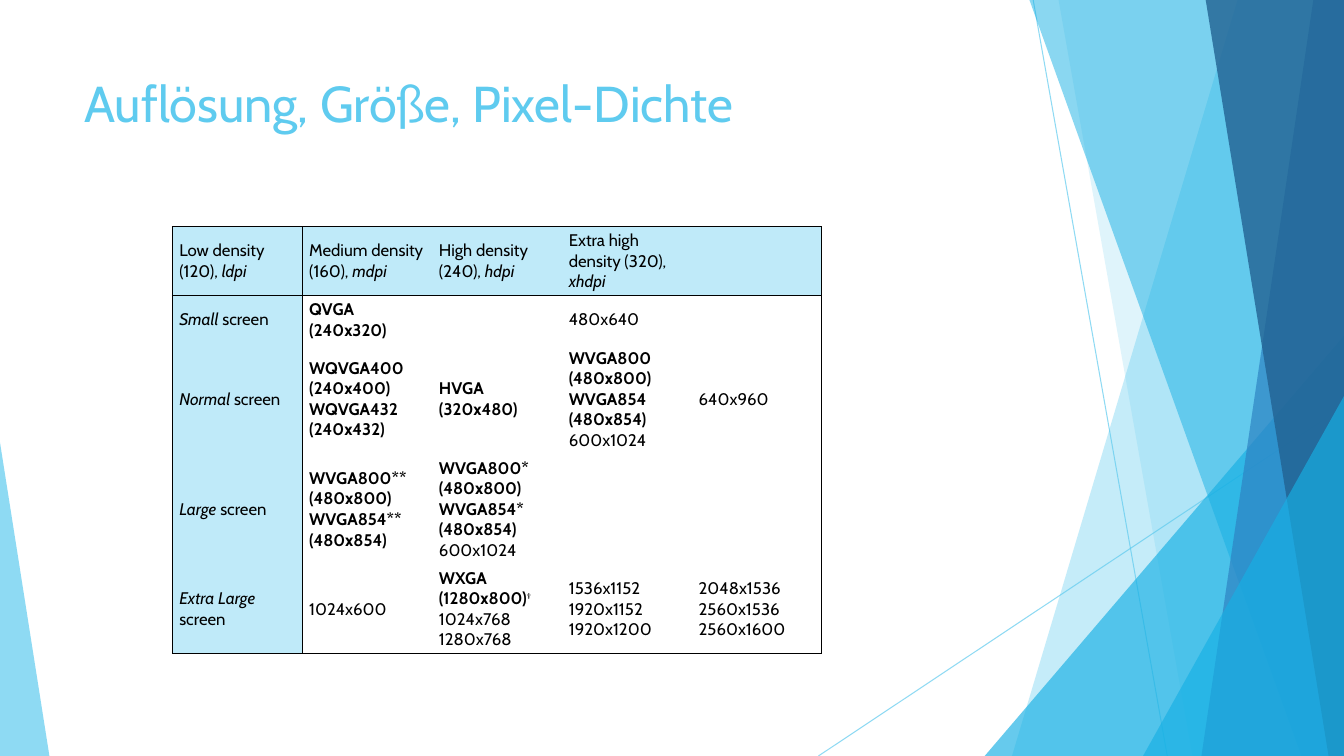
"""Builds a slide with a table of screen sizes and densities beside angular facets."""
from dataclasses import dataclass

from lxml import etree
from pptx import Presentation
from pptx.dml.color import RGBColor
from pptx.enum.shapes import MSO_CONNECTOR, MSO_SHAPE
from pptx.enum.text import MSO_ANCHOR
from pptx.oxml.ns import qn
from pptx.shapes.base import BaseShape
from pptx.slide import Slide
from pptx.table import _Cell
from pptx.text.text import Font, _Paragraph
from pptx.util import Pt

STRAIGHT = MSO_CONNECTOR.STRAIGHT
TRIANGLE = MSO_SHAPE.ISOSCELES_TRIANGLE
TOP, MIDDLE = MSO_ANCHOR.TOP, MSO_ANCHOR.MIDDLE


@dataclass(frozen=True)
class Theme:
    sky: str = "5FCBEF"
    cyan: str = "17B0E4"
    blue: str = "2E83C3"
    navy: str = "226292"
    header: str = "BFEAF9"
    ink: str = "000000"
    font: str = "Cabin"
    title_size: float = 36
    table_size: float = 12


@dataclass(frozen=True)
class Ray:
    x1: float
    y1: float
    x2: float
    y2: float


@dataclass(frozen=True)
class Facet:
    top_x: float
    bottom_x: float
    color: str
    alpha: int


@dataclass(frozen=True)
class Wedge:
    left: float
    top: float
    width: float
    apex: float
    color: str
    alpha: int


@dataclass(frozen=True)
class Run:
    text: str
    bold: bool = False
    italic: bool = False
    raised: bool = False


THEME = Theme()
WIDTH, HEIGHT = 960, 540
FACET_TOP = -0.67

RAYS = [Ray(738, 0, 833.8, HEIGHT), Ray(WIDTH, 290.2, 584.6, HEIGHT)]
DECOR = [
    Facet(884.2, 722.9, THEME.sky, 36),
    Facet(756, 851.8, THEME.sky, 20),
    Wedge(703.4, 239.8, 256.6, 1, THEME.cyan, 66),
    Facet(735.1, 929.5, THEME.cyan, 50),
    Facet(938.2, 858.2, THEME.blue, 70),
    Facet(861.1, 949, THEME.navy, 80),
    Wedge(816.5, 283, 143.5, 1, THEME.cyan, 66),
    Wedge(0, 316.1, 35.3, 0, THEME.sky, 70),
]

TABLE_LEFT, TABLE_TOP = 123.2, 162
COLUMN_WIDTH = 92.75
ROW_HEIGHTS = [49.1, 34.6, 78.7, 78.7, 64]


def density(label: str, code: str) -> list[Run]:
    """Return the runs of a density heading."""
    return [Run(f"{label}, "), Run(code, italic=True)]


def screen(size: str) -> list[Run]:
    """Return the runs of a screen size heading."""
    return [Run(f"{size} ", italic=True), Run("screen")]


def bold(text: str) -> Run:
    """Return a bold run."""
    return Run(text, bold=True)


CELLS: list[list[list[Run]]] = [
    [density("Low density (120)", "ldpi"), density("Medium density (160)", "mdpi"),
     density("High density (240)", "hdpi"), density("Extra high density (320)", "xhdpi"), []],
    [screen("Small"), [bold("QVGA (240x320)")], [], [Run("480x640")], []],
    [screen("Normal"), [bold("WQVGA400 (240x400)\nWQVGA432 (240x432)")],
     [bold("HVGA (320x480)")],
     [bold("WVGA800 (480x800)\nWVGA854 (480x854)\n"), Run("600x1024")], [Run("640x960")]],
    [screen("Large"), [bold("WVGA800** (480x800)\nWVGA854** (480x854)")],
     [bold("WVGA800* (480x800)\nWVGA854* (480x854)\n"), Run("600x1024")], [], []],
    [screen("Extra Large"), [Run("1024x600")],
     [bold("WXGA (1280x800)"), Run("†", raised=True), Run("\n1024x768\n1280x768")],
     [Run("1536x1152\n1920x1152\n1920x1200")], [Run("2048x1536\n2560x1536\n2560x1600")]],
]


def set_alpha(sp: BaseShape, percent: int) -> None:
    """Make the first colour of a shape translucent."""
    color = sp.element.find(".//" + qn("a:srgbClr"))
    etree.SubElement(color, qn("a:alpha"), val=str(percent * 1000))


def style_font(font: Font, size: float, color: str) -> None:
    """Apply the theme typeface with a size and colour."""
    font.name = THEME.font
    font.size = Pt(size)
    font.color.rgb = RGBColor.from_string(color)


def draw_ray(s: Slide, ray: Ray) -> None:
    """Draw a thin translucent line."""
    line = s.shapes.add_connector(STRAIGHT, Pt(ray.x1), Pt(ray.y1), Pt(ray.x2), Pt(ray.y2))
    line.line.color.rgb = RGBColor.from_string(THEME.sky)
    line.line.width = Pt(0.75)
    set_alpha(line, 70)
    etree.SubElement(line.element.spPr, qn("a:effectLst"))


def draw_decor(s: Slide, item: Facet | Wedge) -> None:
    """Draw a translucent facet or wedge reaching the bottom edge."""
    if isinstance(item, Facet):
        builder = s.shapes.build_freeform(Pt(item.top_x), Pt(FACET_TOP))
        corners = [(WIDTH, FACET_TOP), (WIDTH, HEIGHT), (item.bottom_x, HEIGHT)]
        builder.add_line_segments([(Pt(x), Pt(y)) for x, y in corners], close=True)
        sp = builder.convert_to_shape()
    else:
        sp = s.shapes.add_shape(TRIANGLE, Pt(item.left), Pt(item.top),
                                Pt(item.width), Pt(HEIGHT - item.top))
        sp.adjustments[0] = item.apex
    sp.shadow.inherit = False
    sp.fill.solid()
    sp.fill.fore_color.rgb = RGBColor.from_string(item.color)
    sp.line.fill.background()
    set_alpha(sp, item.alpha)


def draw_title(s: Slide, text: str) -> None:
    """Draw the slide title."""
    tf = s.shapes.add_textbox(Pt(53.3), Pt(48), Pt(676.8), Pt(71.3)).text_frame
    tf.word_wrap = True
    tf.vertical_anchor = TOP
    tf.text = text
    style_font(tf.paragraphs[0].runs[0].font, THEME.title_size, THEME.sky)


def add_runs(p: _Paragraph, runs: list[Run]) -> None:
    """Write styled runs, turning newlines into line breaks."""
    for run in runs:
        for i, text in enumerate(run.text.split("\n")):
            if i:
                p.add_line_break()
            if text:
                r = p.add_run()
                r.text = text
                style_font(r.font, THEME.table_size, THEME.ink)
                r.font.bold, r.font.italic = run.bold, run.italic
                if run.raised:
                    r.font._element.set("baseline", "30000")


def set_borders(cell: _Cell, sides: dict[str, bool]) -> None:
    """Rule the chosen sides of a cell and clear the others."""
    tc_pr = cell._tc.get_or_add_tcPr()
    for side, ruled in sides.items():
        ln = etree.SubElement(tc_pr, qn(f"a:ln{side}"), w=str(Pt(1)))
        fill = etree.SubElement(ln, qn("a:solidFill" if ruled else "a:noFill"))
        if ruled:
            etree.SubElement(fill, qn("a:srgbClr"), val=THEME.ink)


def draw_table(s: Slide) -> None:
    """Draw the density table with a ruled frame, header row and header column."""
    rows, cols = len(CELLS), len(CELLS[0])
    table = s.shapes.add_table(rows, cols, Pt(TABLE_LEFT), Pt(TABLE_TOP),
                               Pt(COLUMN_WIDTH * cols), Pt(sum(ROW_HEIGHTS))).table
    table.first_row = table.horz_banding = False
    for column in table.columns:
        column.width = Pt(COLUMN_WIDTH)
    for i, height in enumerate(ROW_HEIGHTS):
        table.rows[i].height = Pt(height)
        for j, runs in enumerate(CELLS[i]):
            cell = table.cell(i, j)
            cell.vertical_anchor = MIDDLE
            cell.margin_left = cell.margin_right = Pt(4.9)
            cell.margin_top = cell.margin_bottom = Pt(2.4)
            set_borders(cell, {"L": j in (0, 1), "R": j in (0, cols - 1),
                               "T": i in (0, 1), "B": i in (0, rows - 1)})
            if i == 0 or j == 0:
                cell.fill.solid()
                cell.fill.fore_color.rgb = RGBColor.from_string(THEME.header)
            else:
                cell.fill.background()
            add_runs(cell.text_frame.paragraphs[0], runs)


def main() -> None:
    """Build and save the presentation."""
    prs = Presentation()
    prs.slide_width, prs.slide_height = Pt(WIDTH), Pt(HEIGHT)
    s = prs.slides.add_slide(prs.slide_layouts[6])
    for ray in RAYS:
        draw_ray(s, ray)
    for item in DECOR:
        draw_decor(s, item)
    draw_title(s, "Auflösung, Größe, Pixel-Dichte")
    draw_table(s)
    prs.save("out.pptx")


if __name__ == "__main__":
    main()
